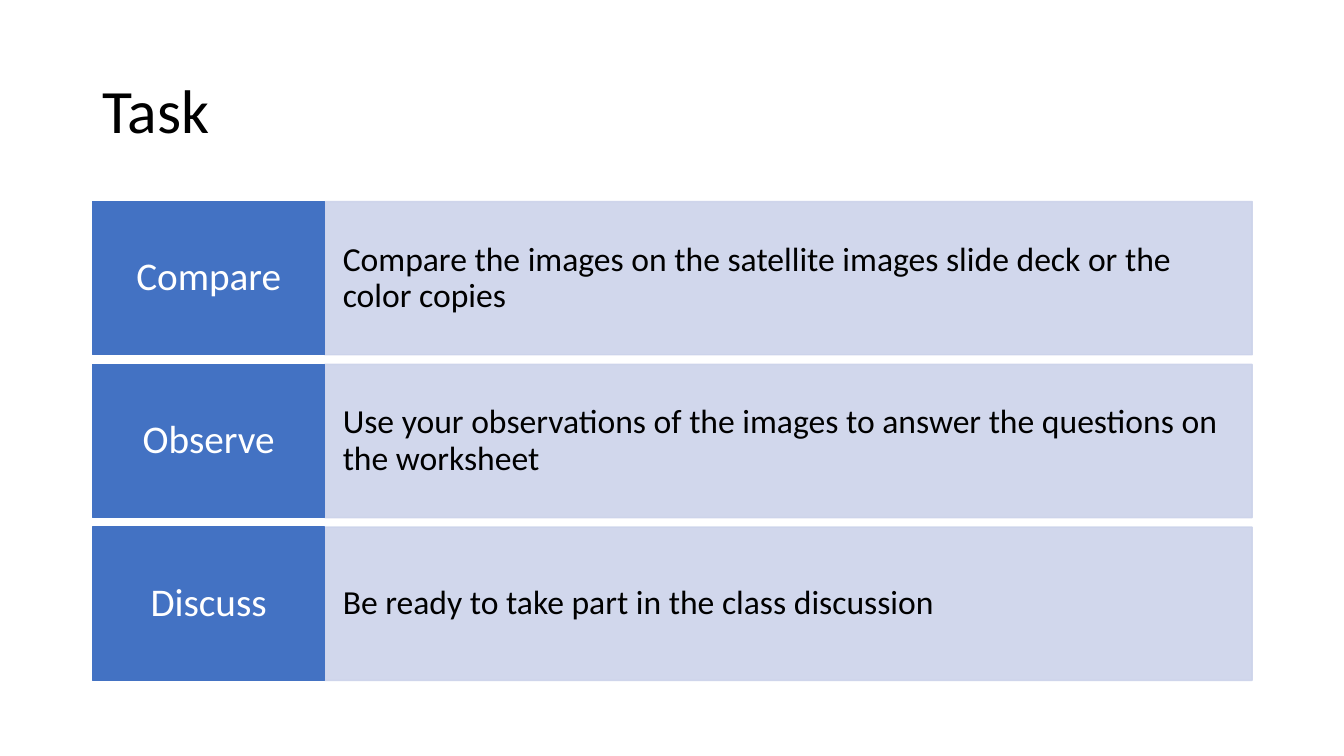
"""Build the Task slide: a title above three labelled steps."""
from typing import NamedTuple

from lxml import etree
from pptx import Presentation, util as u
from pptx.dml.color import RGBColor
from pptx.enum import shapes, text
from pptx.oxml.ns import qn

BLUE = RGBColor(0x43, 0x72, 0xC3)
PALE = RGBColor(0xCC, 0xD3, 0xEA)
BLACK = RGBColor(0, 0, 0)
WHITE = RGBColor(255, 255, 255)

FONT = "Calibri"
LEFT, WIDTH = 0.92, 11.5
LABEL_W = WIDTH / 5
TOP, ROW_H, ROW_STEP = 2.0, 1.52, 1.615


class Step(NamedTuple):
    label: str
    detail: str


class Style(NamedTuple):
    size: int
    color: RGBColor
    align: text.PP_ALIGN
    inset_x: float
    inset_y: float


TITLE = Style(44, BLACK, text.PP_ALIGN.LEFT, 0.1, 0.05)
LABEL = Style(28, WHITE, text.PP_ALIGN.CENTER, 0.12, 0.15)
DETAIL = Style(24, BLACK, text.PP_ALIGN.LEFT, 0.18, 0.39)

STEPS = [
    Step("Compare", "Compare the images on the satellite images slide deck or the color copies"),
    Step("Observe", "Use your observations of the images to answer the questions on the worksheet"),
    Step("Discuss", "Be ready to take part in the class discussion"),
]


def write(sp, words: str, style: Style) -> None:
    """Put one styled, vertically centred paragraph into a shape."""
    tf = sp.text_frame
    tf.word_wrap = True
    tf.vertical_anchor = text.MSO_ANCHOR.MIDDLE
    tf.margin_left = tf.margin_right = u.Inches(style.inset_x)
    tf.margin_top = tf.margin_bottom = u.Inches(style.inset_y)
    tf.text = words
    p = tf.paragraphs[0]
    p.alignment = style.align
    p.line_spacing = 0.9
    r = p.runs[0]
    r.font.name = FONT
    r.font.size = u.Pt(style.size)
    r.font.color.rgb = style.color


def add_box(s, left: float, top: float, width: float, color: RGBColor, opacity: int,
            words: str, style: Style) -> None:
    """Draw a filled rectangle with text; opacity is in percent."""
    sp = s.shapes.add_shape(shapes.MSO_SHAPE.RECTANGLE, u.Inches(left), u.Inches(top),
                            u.Inches(width), u.Inches(ROW_H))
    sp.shadow.inherit = False
    sp.fill.solid()
    sp.fill.fore_color.rgb = color
    sp.line.color.rgb = color
    sp.line.width = u.Pt(1)
    if opacity < 100:
        for clr in sp.fill._xPr.iter(qn("a:srgbClr")):
            etree.SubElement(clr, qn("a:alpha")).set("val", str(opacity * 1000))
    write(sp, words, style)


def main() -> None:
    """Assemble and save the slide."""
    prs = Presentation()
    prs.slide_width, prs.slide_height = u.Inches(13.33), u.Inches(7.5)
    s = prs.slides.add_slide(prs.slide_layouts[6])
    title = s.shapes.add_textbox(u.Inches(LEFT), u.Inches(0.4), u.Inches(WIDTH), u.Inches(1.45))
    write(title, "Task", TITLE)
    for row, step in enumerate(STEPS):
        top = TOP + row * ROW_STEP
        add_box(s, LEFT + LABEL_W, top, WIDTH - LABEL_W, PALE, 90, step.detail, DETAIL)
        add_box(s, LEFT, top, LABEL_W, BLUE, 100, step.label, LABEL)
    prs.save("out.pptx")


if __name__ == "__main__":
    main()
